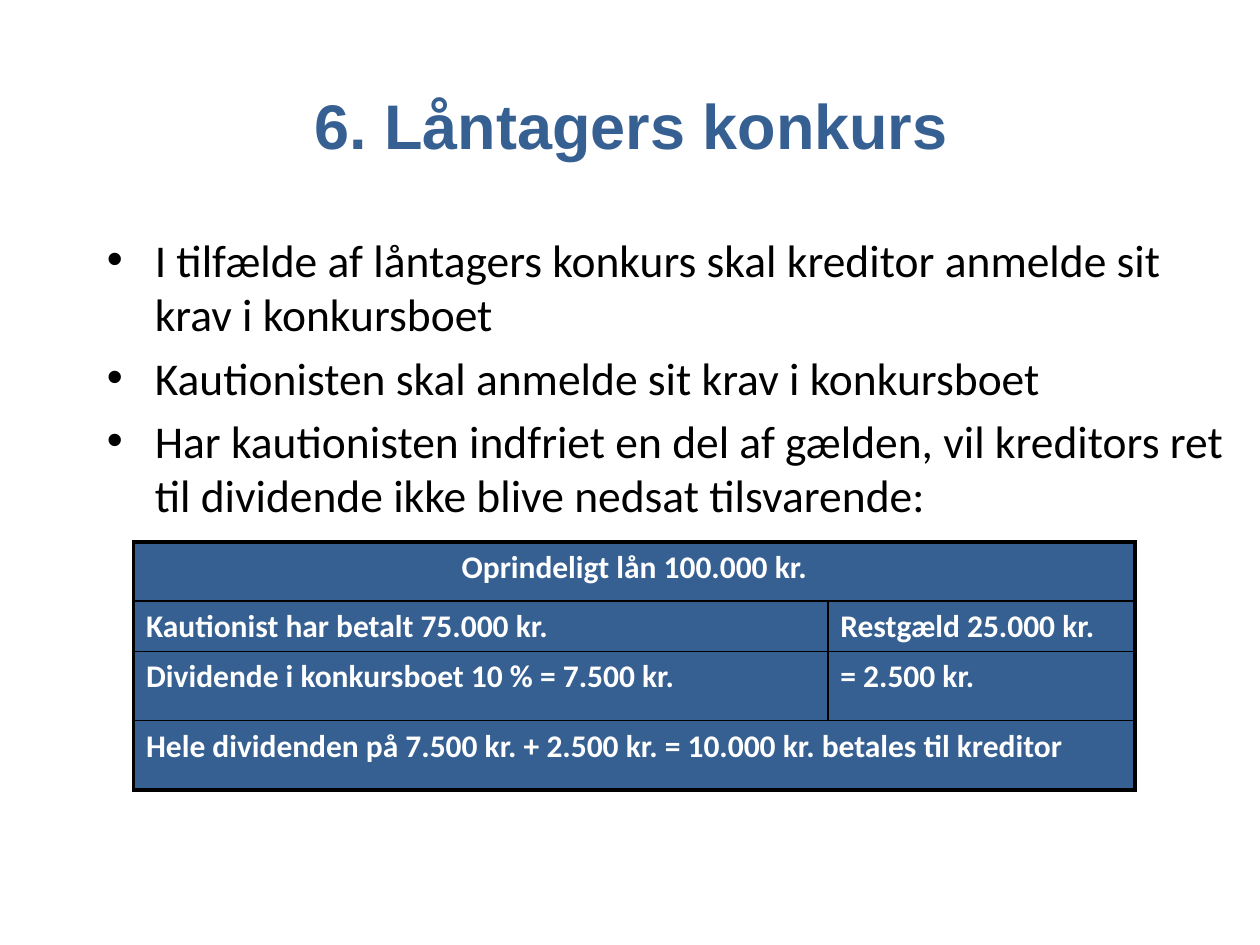
from dataclasses import dataclass

from lxml import etree
from pptx import Presentation
from pptx.dml.color import RGBColor
from pptx.enum.text import MSO_ANCHOR, PP_ALIGN
from pptx.oxml.ns import qn
from pptx.util import Inches, Pt

CENTER, LEFT = PP_ALIGN.CENTER, PP_ALIGN.LEFT
MIDDLE = MSO_ANCHOR.MIDDLE
TITLE_ONLY = 5


@dataclass(frozen=True)
class Theme:
    blue: str = "376092"
    black: str = "000000"
    white: str = "FFFFFF"
    heading_font: str = "Arial"
    body_font: str = "Calibri"
    title_size: float = 36
    body_size: float = 26
    table_size: float = 18
    outer_line: float = 2.25
    inner_line: float = 1


class SlideBuilder:
    def __init__(self, prs, theme):
        self.theme = theme
        self.s = prs.slides.add_slide(prs.slide_layouts[TITLE_ONLY])

    def style(self, p, size, color, font, bold=False, align=LEFT):
        p.alignment = align
        for r in p.runs:
            r.font.size = Pt(size)
            r.font.name = font
            r.font.bold = bold
            r.font.color.rgb = RGBColor.from_string(color)

    def title(self, text, left, top, width, height):
        t = self.theme
        sp = self.s.shapes.title
        sp.left, sp.top = Inches(left), Inches(top)
        sp.width, sp.height = Inches(width), Inches(height)
        tf = sp.text_frame
        tf.text = text
        tf.vertical_anchor = MIDDLE
        self.style(tf.paragraphs[0], t.title_size, t.blue, t.heading_font, True, CENTER)

    def bullets(self, items, left, top, width, height, indent=0.38, gap=5):
        t = self.theme
        sp = self.s.shapes.add_textbox(
            Inches(left), Inches(top), Inches(width), Inches(height))
        tf = sp.text_frame
        tf.word_wrap = True
        for i, item in enumerate(items):
            p = tf.add_paragraph() if i else tf.paragraphs[0]
            p.text = item
            pPr = p._p.get_or_add_pPr()
            pPr.set("marL", str(Inches(indent)))
            pPr.set("indent", str(-Inches(indent)))
            etree.SubElement(pPr, qn("a:buFont"), typeface=t.heading_font)
            etree.SubElement(pPr, qn("a:buChar"), char="•")
            if i:
                p.space_before = Pt(gap)
            self.style(p, t.body_size, t.black, t.body_font)

    def borders(self, cell, widths):
        """Draw the left, right, top and bottom borders, with widths in points."""
        tcPr = cell._tc.get_or_add_tcPr()
        for side, width in zip("LRTB", widths):
            ln = etree.SubElement(tcPr, qn(f"a:ln{side}"), w=str(Pt(width)))
            fill = etree.SubElement(ln, qn("a:solidFill"))
            etree.SubElement(fill, qn("a:srgbClr"), val=self.theme.black)

    def table(self, rows, left, top, col_widths, row_heights):
        """Build a table; a row with a single text spans all the columns."""
        t = self.theme
        n_rows, n_cols = len(rows), len(col_widths)
        frame = self.s.shapes.add_table(
            n_rows, n_cols, Inches(left), Inches(top),
            Inches(sum(col_widths)), Inches(sum(row_heights)))
        table = frame.table
        for column, width in zip(table.columns, col_widths):
            column.width = Inches(width)
        for i, (texts, height) in enumerate(zip(rows, row_heights)):
            table.rows[i].height = Inches(height)
            if len(texts) == 1:
                table.cell(i, 0).merge(table.cell(i, n_cols - 1))
            for j in range(n_cols):
                cell = table.cell(i, j)
                at_right = j == n_cols - 1 or cell.is_merge_origin
                at_edge = (j == 0, at_right, i == 0, i == n_rows - 1)
                self.borders(cell, [t.outer_line if edge else t.inner_line
                                    for edge in at_edge])
                cell.fill.solid()
                cell.fill.fore_color.rgb = RGBColor.from_string(t.blue)
            for j, text in enumerate(texts):
                tf = table.cell(i, j).text_frame
                tf.text = text
                self.style(tf.paragraphs[0], t.table_size, t.white, t.body_font,
                           True, LEFT if i else CENTER)


def main():
    prs = Presentation()
    prs.slide_width, prs.slide_height = Inches(10), Inches(7.5)
    slide = SlideBuilder(prs, Theme())
    slide.title("6. Låntagers konkurs", 0.51, 0.36, 9, 1.25)
    slide.bullets([
        "I tilfælde af låntagers konkurs skal kreditor anmelde sit krav i konkursboet",
        "Kautionisten skal anmelde sit krav i konkursboet",
        "Har kautionisten indfriet en del af gælden, vil kreditors ret til dividende "
        "ikke blive nedsat tilsvarende:",
    ], 0.75, 1.79, 9.25, 4.95)
    slide.table([
        ["Oprindeligt lån 100.000 kr."],
        ["Kautionist har betalt 75.000 kr.", "Restgæld 25.000 kr."],
        ["Dividende i konkursboet 10 % = 7.500 kr.", "= 2.500 kr."],
        ["Hele dividenden på 7.500 kr. + 2.500 kr. = 10.000 kr. betales til kreditor"],
    ], 1.06, 4.3, [5.51, 2.44], [0.47, 0.39, 0.55, 0.55])
    prs.save("out.pptx")


if __name__ == "__main__":
    main()
